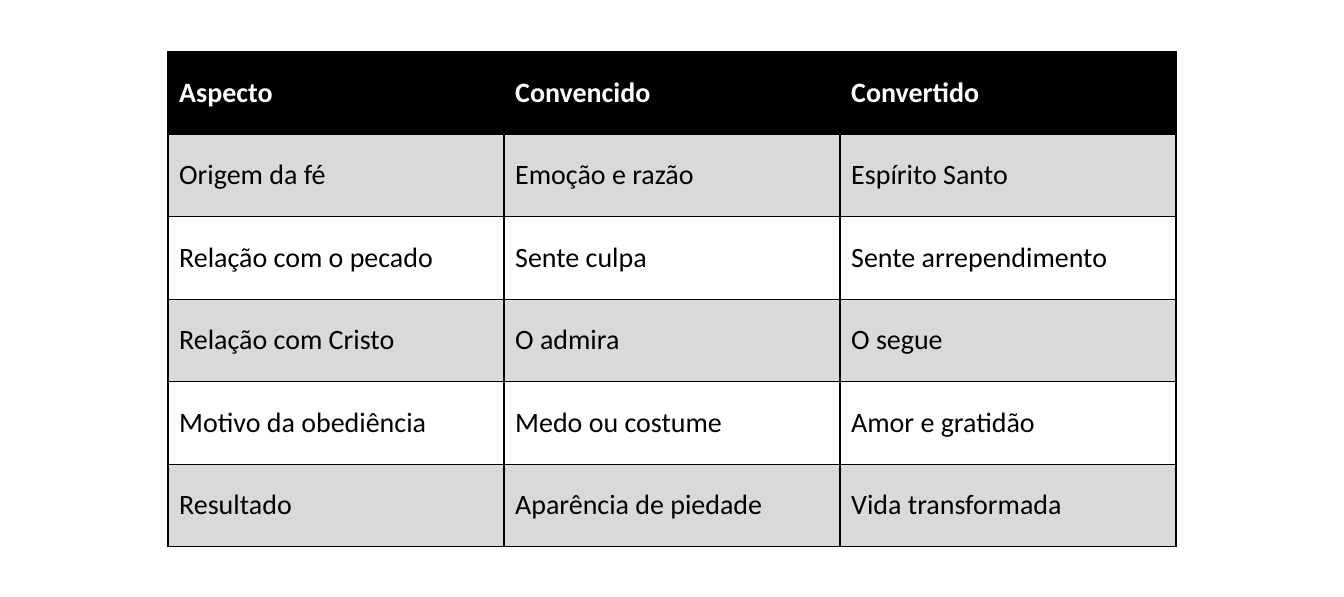
from dataclasses import dataclass

from lxml.etree import SubElement
from pptx import Presentation
from pptx.dml.color import RGBColor
from pptx.enum.text import MSO_ANCHOR
from pptx.oxml.ns import qn
from pptx.slide import Slide
from pptx.table import _Cell
from pptx.util import Inches, Pt

COLORS = {"black": "000000", "gray": "D9D9D9", "white": "FFFFFF"}
SLIDE_W, SLIDE_H = 12, 5.33
LEFT, TOP = SLIDE_W / 8, 0.46
TABLE_W, TABLE_H = SLIDE_W * 3 / 4, 4.42
BORDER = Pt(0.75)
FONT = {"name": "Calibri", "size": Pt(18)}


@dataclass(frozen=True)
class RowStyle:
    fill: str
    text: str
    bold: bool = False


HEADER = RowStyle("black", "white", True)
BANDS = (RowStyle("white", "black"), RowStyle("gray", "black"))

ROWS = [
    ("Aspecto", "Convencido", "Convertido"),
    ("Origem da fé", "Emoção e razão", "Espírito Santo"),
    ("Relação com o pecado", "Sente culpa", "Sente arrependimento"),
    ("Relação com Cristo", "O admira", "O segue"),
    ("Motivo da obediência", "Medo ou costume", "Amor e gratidão"),
    ("Resultado", "Aparência de piedade", "Vida transformada"),
]


def rgb(name: str) -> RGBColor:
    return RGBColor.from_string(COLORS[name])


def add_borders(cell: _Cell) -> None:
    tc_pr = cell._tc.get_or_add_tcPr()
    for side in ("lnL", "lnR", "lnT", "lnB"):
        ln = SubElement(tc_pr, qn(f"a:{side}"), w=str(BORDER))
        fill = SubElement(ln, qn("a:solidFill"))
        SubElement(fill, qn("a:srgbClr"), val=COLORS["black"])


def fill_cell(cell: _Cell, text: str, style: RowStyle) -> None:
    add_borders(cell)
    cell.fill.solid()
    cell.fill.fore_color.rgb = rgb(style.fill)
    cell.vertical_anchor = MSO_ANCHOR.MIDDLE
    r = cell.text_frame.paragraphs[0].add_run()
    r.text = text
    for name, value in {**FONT, "bold": style.bold}.items():
        setattr(r.font, name, value)
    r.font.color.rgb = rgb(style.text)


def add_comparison(s: Slide) -> None:
    box = [Inches(v) for v in (LEFT, TOP, TABLE_W, TABLE_H)]
    table = s.shapes.add_table(len(ROWS), len(ROWS[0]), *box).table
    for i, row in enumerate(ROWS):
        style = BANDS[i % 2] if i else HEADER
        for j, text in enumerate(row):
            fill_cell(table.cell(i, j), text, style)


def main() -> None:
    prs = Presentation()
    prs.slide_width, prs.slide_height = Inches(SLIDE_W), Inches(SLIDE_H)
    add_comparison(prs.slides.add_slide(prs.slide_layouts[6]))
    prs.save("out.pptx")


if __name__ == "__main__":
    main()
